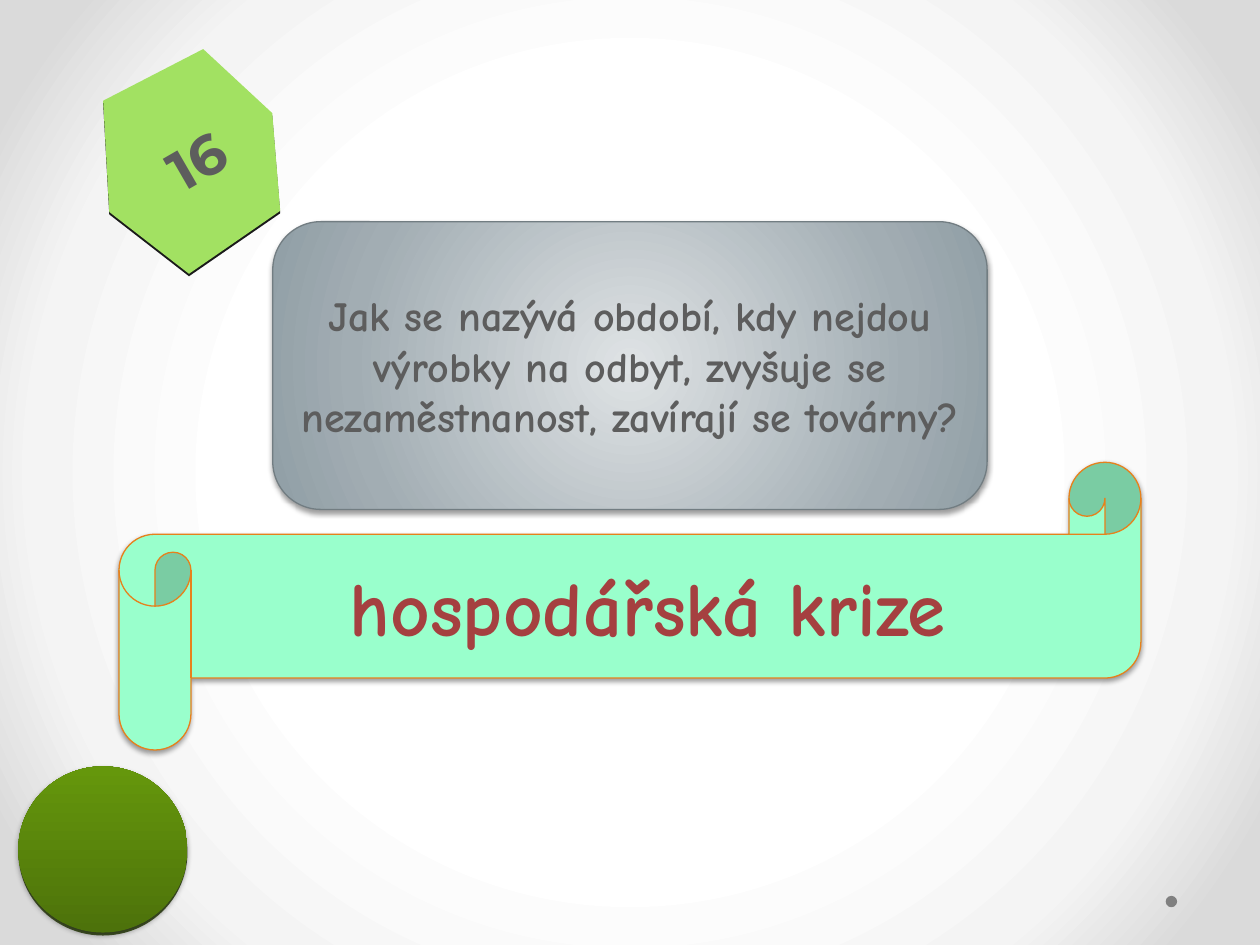
from lxml import etree
from pptx import Presentation
from pptx.dml.color import RGBColor
from pptx.enum.shapes import MSO_SHAPE
from pptx.enum.text import MSO_ANCHOR, PP_ALIGN
from pptx.oxml import parse_xml
from pptx.oxml.ns import nsdecls
from pptx.util import Cm, Pt

ELLIPSE = MSO_SHAPE.OVAL
ROUNDED = MSO_SHAPE.ROUNDED_RECTANGLE
SCROLL = MSO_SHAPE.HORIZONTAL_SCROLL
CENTER = PP_ALIGN.CENTER
MIDDLE = MSO_ANCHOR.MIDDLE
BODY_FONT = "Comic Neue"
NUMBER_FONT = "Montserrat"
BLANK_LAYOUT = 6


def color(hex_string):
    return RGBColor.from_string(hex_string)


def radial_gradient(solid_fill, stops):
    """Replace a solid fill element by a gradient spreading from the centre."""
    stop_xml = "".join(
        f'<a:gs pos="{position * 1000}"><a:srgbClr val="{value}"/></a:gs>'
        for position, value in stops)
    gradient = parse_xml(
        f'<a:gradFill {nsdecls("a")} rotWithShape="1"><a:gsLst>{stop_xml}</a:gsLst>'
        '<a:path path="circle"><a:fillToRect l="50000" t="50000" r="50000" b="50000"/>'
        '</a:path></a:gradFill>')
    solid_fill.getparent().replace(solid_fill, gradient)


def add_shadow(shape, opacity=38):
    shape.shadow.inherit = False
    effects = shape.element.xpath("./p:spPr/a:effectLst")[0]
    effects.append(etree.fromstring(
        f'<a:outerShdw {nsdecls("a")} blurRad="{Pt(3.1)}" dist="{Pt(1.6)}" '
        'dir="5400000" rotWithShape="0"><a:srgbClr val="000000">'
        f'<a:alpha val="{opacity * 1000}"/></a:srgbClr></a:outerShdw>'))


def style(shape, fill, line=None):
    shape.shadow.inherit = False
    shape.fill.solid()
    shape.fill.fore_color.rgb = color(fill)
    if line:
        shape.line.color.rgb = color(line)
        shape.line.width = Pt(0.75)
    else:
        shape.line.fill.background()


def write(shape, text, font_name, size, text_color):
    frame = shape.text_frame
    frame.word_wrap = True
    frame.vertical_anchor = MIDDLE
    frame.text = text
    paragraph = frame.paragraphs[0]
    paragraph.alignment = CENTER
    font = paragraph.runs[0].font
    font.name = font_name
    font.size = Pt(size)
    font.bold = True
    font.color.rgb = color(text_color)


def add_shape(slide, kind, box, fill, line=None):
    shape = slide.shapes.add_shape(kind, *(Cm(length) for length in box))
    style(shape, fill, line)
    return shape


def paint_background(slide):
    slide.background.fill.solid()
    radial_gradient(slide.element.xpath(".//p:bgPr/a:solidFill")[0],
                    [(50, "FFFFFF"), (76, "F4F4F4"), (92, "DADADA")])


def add_number_badge(slide, box, number):
    """Tilted hexagon with a thin dark lower side and a tilted number."""
    left, top, width, height = box
    corners = [(0, 0.23), (0.565, 0), (0.955, 0.285),
               (1, 0.72), (0.485, 1), (0.035, 0.725)]
    for drop, fill in ((0.05, "1A1A1A"), (0, "A2E162")):
        points = [(Cm(left + x * width), Cm(top + drop + y * height))
                  for x, y in corners]
        builder = slide.shapes.build_freeform(*points[0], scale=1.0)
        builder.add_line_segments(points[1:], close=True)
        style(builder.convert_to_shape(), fill)
    label_width, label_height = 2.6, 1.8
    label = slide.shapes.add_textbox(
        Cm(left + 0.525 * width - label_width / 2),
        Cm(top + 0.49 * height - label_height / 2),
        Cm(label_width), Cm(label_height))
    label.rotation = -30
    write(label, number, NUMBER_FONT, 32, "5D5D5D")


def add_question(slide, box, text):
    card = add_shape(slide, ROUNDED, box, "A2ADB3", "727D82")
    radial_gradient(card.element.xpath("./p:spPr/a:solidFill")[0],
                    [(0, "DFE3E5"), (72, "A2ADB3"), (100, "909EA5")])
    add_shadow(card)
    write(card, text, BODY_FONT, 24, "5D5D5D")


def add_answer(slide, box, text):
    scroll = add_shape(slide, SCROLL, box, "99FFCC", "E6811C")
    scroll.adjustments[0] = 0.25
    add_shadow(scroll)
    write(scroll, text, BODY_FONT, 44, "A54040")


def add_ball(slide, box):
    left, top, width, height = box
    add_shape(slide, ELLIPSE, (left, top + 0.06, width, height), "47592A")
    ball = add_shape(slide, ELLIPSE, box, "65970C")
    ball.fill.gradient()
    ball.fill.gradient_angle = 90
    stops = ball.fill.gradient_stops
    for stop, position, value in zip(stops, (0, 1), ("4D720B", "65970C")):
        stop.position = position
        stop.color.rgb = color(value)
    add_shadow(ball, 35)


def main():
    presentation = Presentation()
    presentation.slide_width = Cm(25.4)
    presentation.slide_height = Cm(19.05)
    slide = presentation.slides.add_slide(presentation.slide_layouts[BLANK_LAYOUT])
    paint_background(slide)
    add_shape(slide, ELLIPSE, (23.5, 18.06, 0.23, 0.23), "808080")
    add_number_badge(slide, (2.08, 0.99, 3.57, 4.53), "16")
    add_question(slide, (5.5, 4.47, 14.4, 5.8),
                 "Jak se nazývá období, kdy nejdou výrobky na odbyt, "
                 "zvyšuje se nezaměstnanost, zavírají se továrny?")
    add_ball(slide, (0.37, 15.45, 3.41, 3.35))
    add_answer(slide, (2.4, 9.32, 20.6, 5.8), "hospodářská krize")
    presentation.save("out.pptx")


if __name__ == "__main__":
    main()
